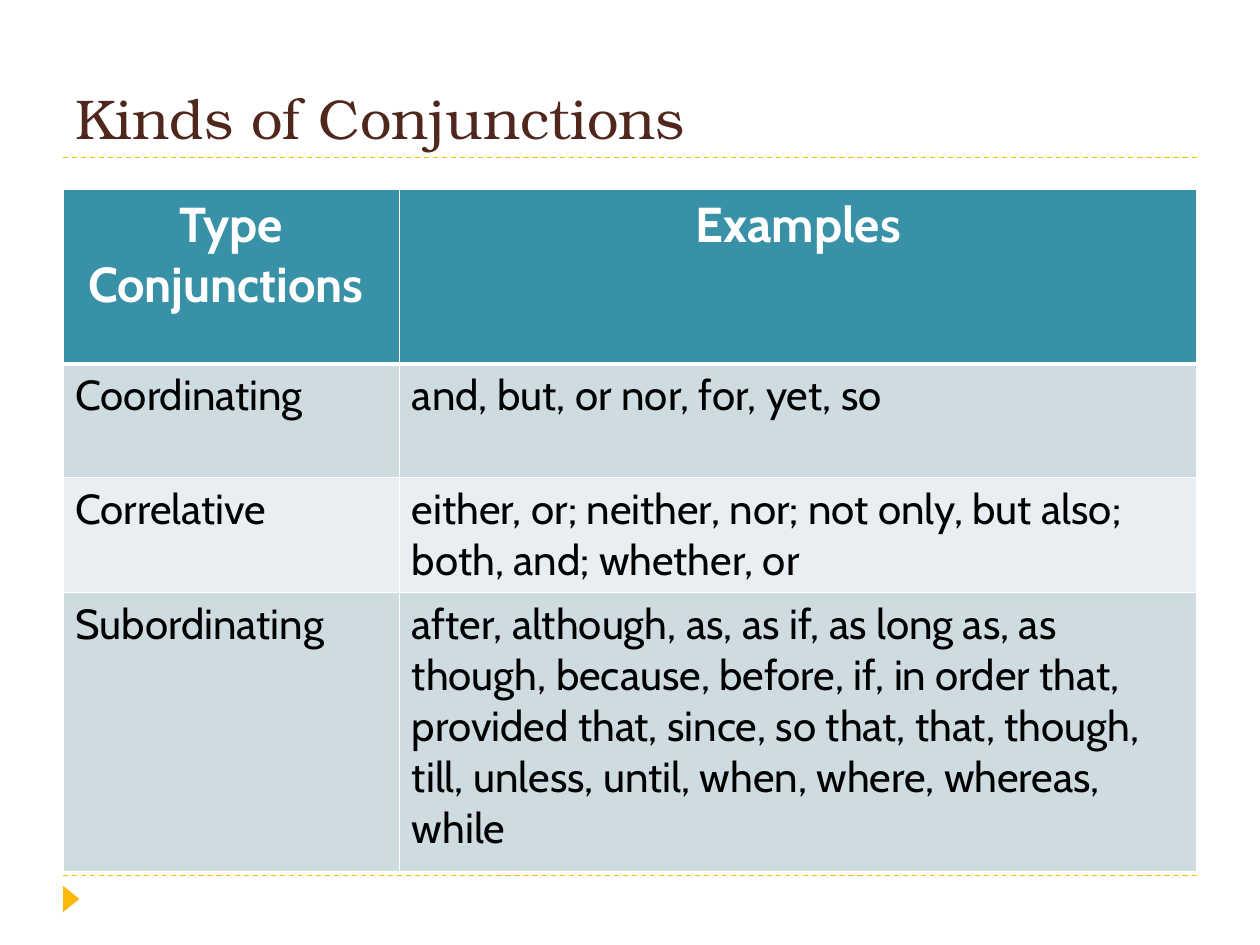
"""Build a slide with a table of the kinds of conjunctions."""
from lxml.etree import SubElement
from pptx import Presentation
from pptx.dml.color import RGBColor
from pptx.enum.dml import MSO_LINE
from pptx.enum.shapes import MSO_CONNECTOR, MSO_SHAPE
from pptx.enum.text import MSO_ANCHOR, PP_ALIGN
from pptx.oxml.ns import qn
from pptx.util import Inches, Pt

COLORS = {
    "accent": "FEB80A",
    "title": "4F271C",
    "header": "3891A7",
    "odd_row": "CEDCE1",
    "even_row": "E8EEF1",
    "white": "FFFFFF",
    "black": "000000",
}
KINDS = [
    ("Type Conjunctions ", "Examples"),
    ("Coordinating", "and, but, or nor, for, yet, so"),
    ("Correlative", "either, or; neither, nor; not only, but also; both, and; whether, or"),
    ("Subordinating", "after, although, as, as if, as long as, as though, because, before, "
     "if, in order that, provided that, since, so that, that, though, till, unless, until, "
     "when, where, whereas, while"),
]
COLUMN_WIDTHS = [2.67, 6.33]
ROW_HEIGHTS = [1.39, 0.9, 0.9, 2.22]


def color(key):
    return RGBColor.from_string(COLORS[key])


def add_border(cell, side, points):
    border = SubElement(cell._tc.get_or_add_tcPr(), qn(f"a:ln{side}"), w=str(Pt(points)))
    fill = SubElement(border, qn("a:solidFill"))
    SubElement(fill, qn("a:srgbClr"), val=COLORS["white"])


presentation = Presentation()
presentation.slide_width = Inches(10)
presentation.slide_height = Inches(7.5)
slide = presentation.slides.add_slide(presentation.slide_layouts[5])

for y in (6.95, 1.25):
    rule = slide.shapes.add_connector(
        MSO_CONNECTOR.STRAIGHT, Inches(0.5), Inches(y), Inches(9.5), Inches(y))
    rule.line.color.rgb = color("accent")
    rule.line.width = Pt(0.75)
    rule.line.dash_style = MSO_LINE.DASH
    SubElement(rule._element.spPr, qn("a:effectLst"))

marker = slide.shapes.add_shape(
    MSO_SHAPE.ISOSCELES_TRIANGLE, Inches(0.46), Inches(7.07), Inches(0.21), Inches(0.13))
marker.rotation = 90
marker.shadow.inherit = False
marker.fill.solid()
marker.fill.fore_color.rgb = color("accent")
marker.line.fill.background()

title = slide.shapes.title
title.left, title.top = Inches(0.5), Inches(0.17)
title.width, title.height = Inches(9), Inches(1.08)
title.text_frame.text = "Kinds of Conjunctions"
title.text_frame.vertical_anchor = MSO_ANCHOR.BOTTOM
heading = title.text_frame.paragraphs[0]
heading.alignment = PP_ALIGN.LEFT
heading.font.name = "TeX Gyre Bonum"
heading.font.size = Pt(32)
heading.font.color.rgb = color("title")

conjunctions = slide.shapes.add_table(
    len(KINDS), len(COLUMN_WIDTHS), Inches(0.5), Inches(1.5),
    Inches(sum(COLUMN_WIDTHS)), Inches(sum(ROW_HEIGHTS))).table
for column, width in zip(conjunctions.columns, COLUMN_WIDTHS):
    column.width = Inches(width)

for row_index, (kind, height) in enumerate(zip(KINDS, ROW_HEIGHTS)):
    conjunctions.rows[row_index].height = Inches(height)
    is_header = row_index == 0
    row_fill = "header" if is_header else "odd_row" if row_index % 2 else "even_row"
    for column_index, wording in enumerate(kind):
        cell = conjunctions.cell(row_index, column_index)
        for side in "LRTB":
            thick = (is_header and side == "B") or (row_index == 1 and side == "T")
            add_border(cell, side, 3 if thick else 1)
        cell.fill.solid()
        cell.fill.fore_color.rgb = color(row_fill)
        cell.text = wording
        paragraph = cell.text_frame.paragraphs[0]
        paragraph.alignment = PP_ALIGN.CENTER if is_header else PP_ALIGN.LEFT
        paragraph.font.name = "Cabin"
        paragraph.font.size = Pt(28 if is_header else 24)
        paragraph.font.bold = is_header
        paragraph.font.color.rgb = color("white" if is_header else "black")

presentation.save("out.pptx")
